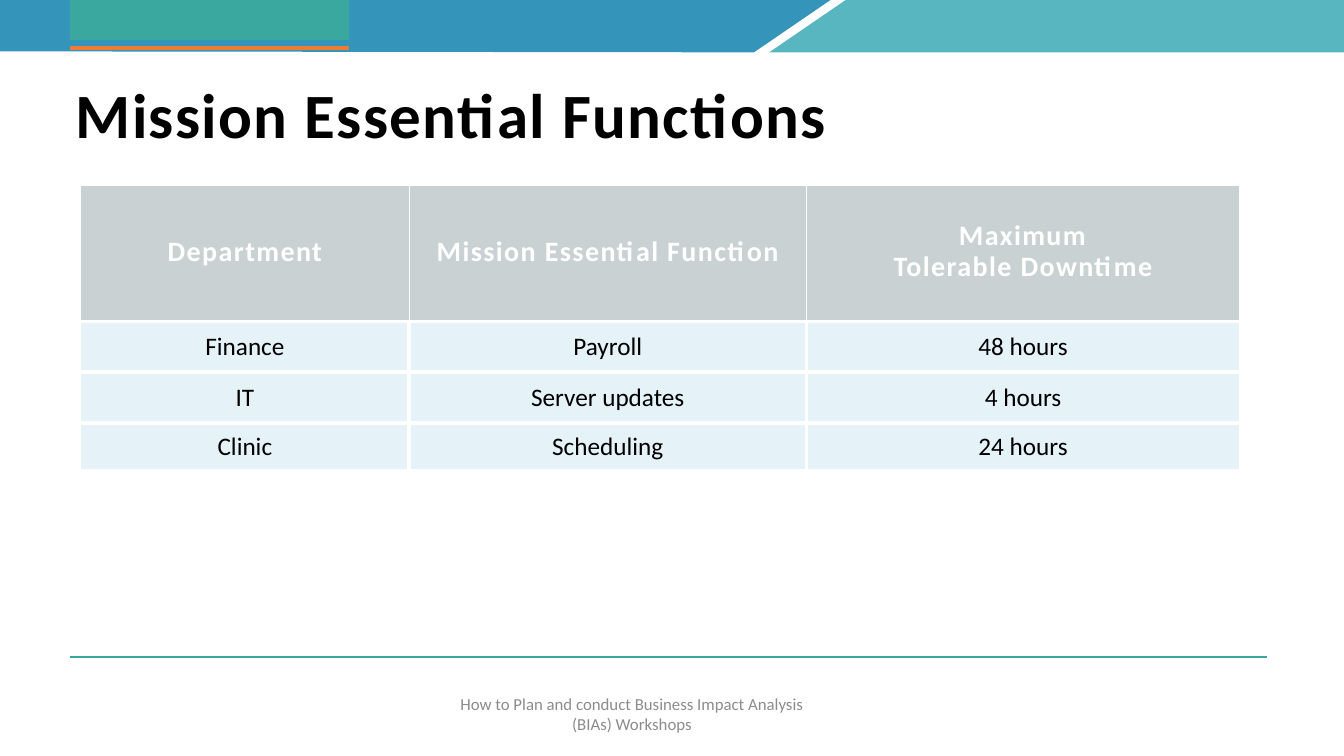
from lxml.etree import SubElement
from pptx import Presentation
from pptx.dml.color import RGBColor
from pptx.enum.shapes import MSO_CONNECTOR as Connector, MSO_SHAPE as Shape
from pptx.enum.text import MSO_ANCHOR as Anchor, PP_ALIGN as Align
from pptx.oxml.ns import qn
from pptx.util import Inches, Pt

WIDTH, HEIGHT = Inches(13.33), Inches(7.5)
WHITE, BLACK, GREY = "FFFFFF", "000000", "8C8C8C"
BLUE, TEAL, GREEN, ORANGE = "3494BA", "58B6C0", "3AA89E", "ED7D31"
HEADER_FILL, BODY_FILL = "CAD1D2", "7FC1DB"
COLUMNS = [24.45, 29.55, 32.25]
ROWS = [18, 6.67, 6.8, 6.13]
FUNCTIONS = [
    ["Department", "Mission Essential Function", "Maximum\nTolerable Downtime"],
    ["Finance", "Payroll", "48 hours"],
    ["IT", "Server updates", "4 hours"],
    ["Clinic", "Scheduling", "24 hours"],
]


def across(percent):
    return round(WIDTH * percent / 100)


def down(percent):
    return round(HEIGHT * percent / 100)


def area(left, top, width, height):
    """Turn percentages of the slide into a position and size."""
    return across(left), down(top), across(width), down(height)


def colour(hex_code):
    return RGBColor.from_string(hex_code)


def paint(fill, hex_code):
    fill.solid()
    fill.fore_color.rgb = colour(hex_code)


def finish(shape, hex_code):
    """Give a shape a flat fill with neither outline nor shadow."""
    paint(shape.fill, hex_code)
    shape.line.fill.background()
    shape.shadow.inherit = False


def add_band(page, corners, hex_code):
    points = [(across(x), down(y)) for x, y in corners]
    builder = page.shapes.build_freeform(*points[0])
    builder.add_line_segments(points[1:], close=True)
    finish(builder.convert_to_shape(), hex_code)


def add_rule(page, left, right, top, hex_code, weight):
    rule = page.shapes.add_connector(
        Connector.STRAIGHT, across(left), down(top), across(right), down(top))
    rule.line.color.rgb = colour(hex_code)
    rule.line.width = Pt(weight)
    SubElement(rule._element.spPr, qn("a:effectLst"))


def write(frame, text, size, hex_code, bold=False, align=Align.CENTER, spacing=0):
    """Fill the first paragraph; spacing is the letter spacing in points."""
    para = frame.paragraphs[0]
    para.text = text
    para.alignment = align
    font = para.font
    font.name, font.size, font.bold = "Calibri", Pt(size), bold
    font.color.rgb = colour(hex_code)
    para._p.pPr.find(qn("a:defRPr")).set("spc", str(spacing * 100))
    return para


def add_title(page, text):
    title = page.shapes.title
    title.left, title.top, title.width, title.height = area(4.88, 10.8, 74.1, 11.33)
    title.text_frame.vertical_anchor = Anchor.TOP
    para = write(title.text_frame, text, 45, BLACK, True, Align.LEFT, 1)
    para.line_spacing = 0.85


def add_footer(page, text):
    frame = page.shapes.add_textbox(*area(32.85, 92.53, 28.35, 3.87)).text_frame
    frame.word_wrap = True
    frame.vertical_anchor = Anchor.MIDDLE
    write(frame, text, 12, GREY)


def add_border(cell, side, weight):
    line = SubElement(cell._tc.get_or_add_tcPr(), qn(f"a:ln{side}"), w=str(Pt(weight)))
    SubElement(SubElement(line, qn("a:solidFill")), qn("a:srgbClr"), val=WHITE)


def add_inner_borders(cell, row, column):
    upright = 1 if row == 0 else 3
    sides = [("L", column > 0, upright), ("R", column < len(COLUMNS) - 1, upright),
             ("T", row > 0, 3), ("B", row < len(ROWS) - 1, 3)]
    for side, inside, weight in sides:
        if inside:
            add_border(cell, side, weight)


def fill_cell(cell, text, is_header):
    cell.vertical_anchor = Anchor.MIDDLE
    cell.margin_left = cell.margin_right = Inches(0.01)
    cell.margin_top = cell.margin_bottom = 0
    if is_header:
        paint(cell.fill, HEADER_FILL)
        write(cell.text_frame, text, 20, WHITE, True, spacing=1).line_spacing = Pt(22)
    else:
        cell.margin_top = Inches(0.01)
        paint(cell.fill, BODY_FILL)
        tint = cell._tc.tcPr.find(qn("a:solidFill"))[0]
        SubElement(tint, qn("a:alpha"), val="20000")
        write(cell.text_frame, text, 18, BLACK)


def add_function_table(page):
    table = page.shapes.add_table(
        len(ROWS), len(COLUMNS), *area(6, 24.53, sum(COLUMNS), sum(ROWS))).table
    table.horz_banding = False
    for column, share in zip(table.columns, COLUMNS):
        column.width = across(share)
    for row, share in zip(table.rows, ROWS):
        row.height = down(share)
    for r, texts in enumerate(FUNCTIONS):
        for c, text in enumerate(texts):
            add_inner_borders(table.cell(r, c), r, c)
            fill_cell(table.cell(r, c), text, r == 0)


def main():
    deck = Presentation()
    deck.slide_width, deck.slide_height = WIDTH, HEIGHT
    page = deck.slides.add_slide(deck.slide_layouts.get_by_name("Title Only"))
    add_band(page, [(0, 0), (61.8, 0), (56.1, 6.93), (0, 6.8)], BLUE)
    add_band(page, [(62.93, 0), (100, 0), (100, 6.93), (57.23, 6.93)], TEAL)
    finish(page.shapes.add_shape(Shape.RECTANGLE, *area(5.18, 0, 20.78, 5.33)), GREEN)
    add_rule(page, 5.18, 25.96, 6.4, ORANGE, 3)
    add_rule(page, 5.18, 94.3, 86.93, GREEN, 1.75)
    add_title(page, "Mission Essential Functions")
    add_footer(page, "How to Plan and conduct Business Impact Analysis (BIAs) Workshops")
    add_function_table(page)
    deck.save("out.pptx")


if __name__ == "__main__":
    main()
